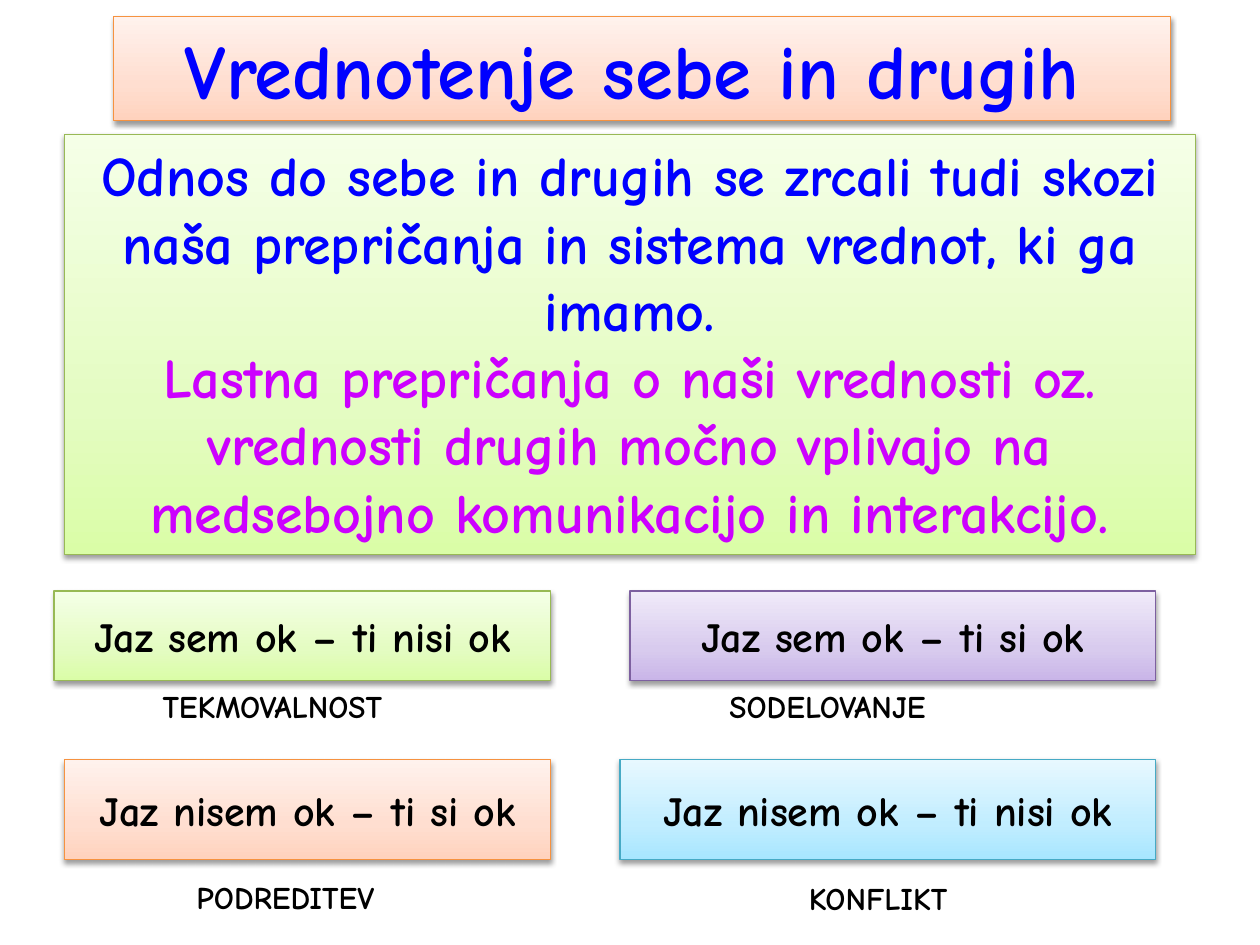
from copy import deepcopy

from lxml import etree
from pptx import Presentation
from pptx import util as u
from pptx.dml.color import RGBColor
from pptx.enum import shapes, text
from pptx.oxml import ns


class Theme:
    font = "Comic Neue"
    title_size, body_size, box_size, label_size = 44, 32, 24, 18
    black, blue, magenta = "000000", "0000FF", "CC00FF"
    # Outline, then gradient stops from bottom to top
    green = ("98B955", "DAFDA7", "E4FCC2", "F5FFE7")
    orange = ("F69240", "FFD2BD", "FFDED0", "FFF2ED")
    cyan = ("46AAC5", "A7E6FF", "C1EDFF", "E7F8FF")
    purple = ("7D60A0", "C9B5E8", "D8CBEE", "F0EAF9")
    stop_positions = (0, 0.35, 1)


def write(shape, lines, size, align, anchor, wrap):
    """Write (wording, colour) lines into a shape, one paragraph each."""
    frame = shape.text_frame
    frame.word_wrap = wrap
    frame.vertical_anchor = anchor
    frame.text = "\n".join(wording for wording, _ in lines)
    for paragraph, (_, color) in zip(frame.paragraphs, lines):
        paragraph.alignment = align
        paragraph.font.name = Theme.font
        paragraph.font.size = u.Pt(size)
        paragraph.font.bold = True
        paragraph.font.color.rgb = RGBColor.from_string(color)


def add_panel(slide, box, palette, lines, size, anchor, wrap=False):
    """Add a gradient rectangle with a soft shadow and centred text."""
    shape = slide.shapes.add_shape(shapes.MSO_SHAPE.RECTANGLE, *map(u.Inches, box))
    outline, *stop_colors = palette
    shape.line.color.rgb = RGBColor.from_string(outline)
    shape.line.width = u.Pt(0.75)

    # Three-stop gradient running upwards
    shape.fill.gradient()
    shape.fill.gradient_angle = 90
    stop_list = shape._element.spPr.find(".//" + ns.qn("a:gsLst"))
    stop_list.append(deepcopy(stop_list[-1]))
    for stop, position, color in zip(
        shape.fill.gradient_stops, Theme.stop_positions, stop_colors
    ):
        stop.position = position
        stop.color.rgb = RGBColor.from_string(color)

    # Shadow
    shape.shadow.inherit = False
    effects = shape._element.spPr.find(ns.qn("a:effectLst"))
    shadow = etree.SubElement(
        effects, ns.qn("a:outerShdw"), blurRad=str(u.Pt(3.1)),
        dist=str(u.Pt(1.6)), dir="5400000", rotWithShape="0",
    )
    color = etree.SubElement(shadow, ns.qn("a:srgbClr"), val=Theme.black)
    etree.SubElement(color, ns.qn("a:alpha"), val="38000")

    write(shape, lines, size, text.PP_ALIGN.CENTER, anchor, wrap)
    return shape


presentation = Presentation()
presentation.slide_width = u.Inches(10)
presentation.slide_height = u.Inches(7.5)
slide = presentation.slides.add_slide(presentation.slide_layouts[6])

# Four life positions
positions = [
    ((0.43, 4.69, 3.94, 0.71), Theme.green, "Jaz sem ok – ti nisi ok"),
    ((0.51, 6.03, 3.86, 0.79), Theme.orange, "Jaz nisem ok – ti si ok"),
    ((4.92, 6.03, 4.25, 0.79), Theme.cyan, "Jaz nisem ok – ti nisi ok"),
    ((5, 4.69, 4.17, 0.71), Theme.purple, "Jaz sem ok – ti si ok"),
]
for box, palette, wording in positions:
    add_panel(slide, box, palette, [(wording, Theme.black)], Theme.box_size,
              text.MSO_ANCHOR.MIDDLE)

# Title
title = add_panel(
    slide, (0.9, 0.13, 8.39, 0.83), Theme.orange,
    [("Vrednotenje sebe in drugih", Theme.blue)],
    Theme.title_size, text.MSO_ANCHOR.TOP,
)
title.text_frame.margin_right = u.Inches(0.25)

# Main statement
add_panel(
    slide, (0.51, 1.07, 8.98, 3.33), Theme.green,
    [
        ("Odnos do sebe in drugih se zrcali tudi skozi naša prepričanja "
         "in sistema vrednot, ki ga imamo.", Theme.blue),
        ("Lastna prepričanja o naši vrednosti oz. vrednosti drugih močno "
         "vplivajo na medsebojno komunikacijo in interakcijo.", Theme.magenta),
    ],
    Theme.body_size, text.MSO_ANCHOR.TOP, wrap=True,
)

# Outcome under each position, with its left inset
outcomes = [
    ((0.75, 5.4, 3.23, 0.4), 0.54, "TEKMOVALNOST"),
    ((5.08, 5.4, 3.23, 0.4), 0.71, "SODELOVANJE"),
    ((0.83, 6.92, 3.23, 0.4), 0.73, "PODREDITEV"),
    ((5.24, 6.93, 3.31, 0.4), 1.18, "KONFLIKT"),
]
for box, inset, wording in outcomes:
    label = slide.shapes.add_textbox(*map(u.Inches, box))
    write(label, [(wording, Theme.black)], Theme.label_size,
          text.PP_ALIGN.LEFT, text.MSO_ANCHOR.TOP, True)
    label.text_frame.margin_left = u.Inches(inset)

presentation.save("out.pptx")
